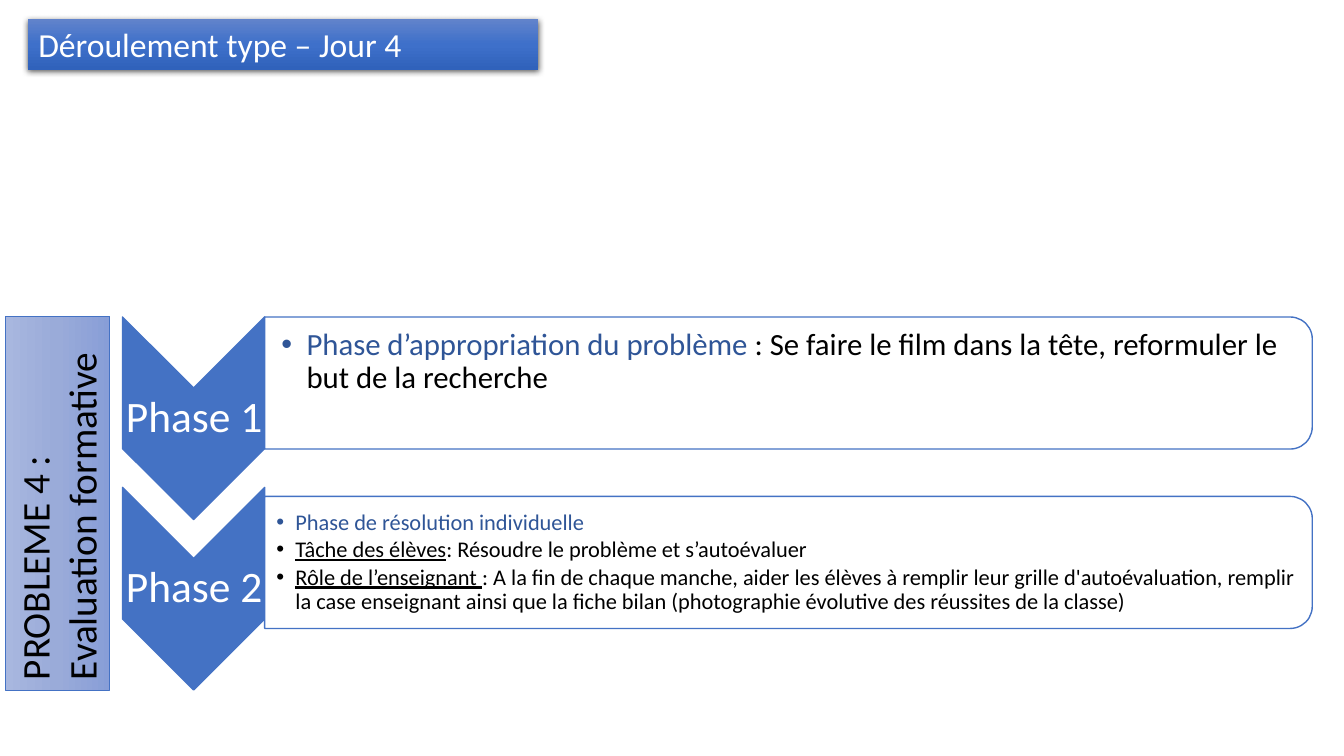
from copy import deepcopy
from dataclasses import dataclass

from lxml import etree
from pptx import Presentation
from pptx.dml.color import RGBColor
from pptx.enum.shapes import MSO_SHAPE
from pptx.enum.text import MSO_ANCHOR, MSO_AUTO_SIZE, PP_ALIGN
from pptx.oxml.ns import qn
from pptx.util import Inches, Pt

CHEVRON = MSO_SHAPE.CHEVRON
PANEL = MSO_SHAPE.ROUND_2_SAME_RECTANGLE
RECTANGLE = MSO_SHAPE.RECTANGLE
TOP, MIDDLE = MSO_ANCHOR.TOP, MSO_ANCHOR.MIDDLE
LEFT, CENTER = PP_ALIGN.LEFT, PP_ALIGN.CENTER
NO_FIT = MSO_AUTO_SIZE.NONE
TWO_CONTENT = 3  # layout with a title and two lists


@dataclass(frozen=True)
class Theme:
    font: str = "Calibri"
    white: str = "FFFFFF"
    black: str = "000000"
    accent: str = "4472C4"
    heading: str = "2F5597"
    title_gradient: tuple = ("6183CB", "3E70CA", "3062BB")
    side_gradient: tuple = ("A8B7DF", "9AABD9", "889ED7")
    title_size: int = 24
    side_size: int = 28
    phase_size: int = 31


@dataclass(frozen=True)
class Run:
    text: str
    color: str
    underline: bool = False


@dataclass(frozen=True)
class Phase:
    name: str
    size: int
    indent: float
    inset: float
    anchor: MSO_ANCHOR
    items: list


THEME = Theme()

PHASES = [
    Phase("Phase 1", 22, 0.25, 0.17, TOP, [
        [Run("Phase d’appropriation du problème ", THEME.heading),
         Run(": Se faire le film dans la tête, reformuler le but de la recherche",
             THEME.black)],
    ]),
    Phase("Phase 2", 16, 0.19, 0.12, MIDDLE, [
        [Run("Phase de résolution individuelle", THEME.heading)],
        [Run("Tâche des élèves", THEME.black, True),
         Run(": Résoudre le problème et s’autoévaluer", THEME.black)],
        [Run("Rôle de l’enseignant ", THEME.black, True),
         Run(": A la fin de chaque manche, aider les élèves à remplir leur grille "
             "d'autoévaluation, remplir la case enseignant ainsi que la fiche bilan "
             "(photographie évolutive des réussites de la classe)", THEME.black)],
    ]),
]


def place(sp, left: float, top: float, width: float, height: float) -> None:
    sp.left, sp.top = Inches(left), Inches(top)
    sp.width, sp.height = Inches(width), Inches(height)


def set_frame(sp, anchor: MSO_ANCHOR, left: float, rest: float):
    tf = sp.text_frame
    tf.word_wrap = True
    tf.auto_size = NO_FIT
    tf.vertical_anchor = anchor
    tf.margin_left = Inches(left)
    tf.margin_top = tf.margin_right = tf.margin_bottom = Inches(rest)
    return tf


def add_run(p, run: Run, size: int) -> None:
    r = p.add_run()
    r.text = run.text
    r.font.name = THEME.font
    r.font.size = Pt(size)
    r.font.color.rgb = RGBColor.from_string(run.color)
    r.font.underline = run.underline


def set_gradient(sp, colors: tuple) -> None:
    """Fill from the shape's top to its bottom with three even stops."""
    sp.fill.gradient()
    sp.fill.gradient_angle = 270
    stop_list = sp.element.spPr.find(".//" + qn("a:gsLst"))
    stop_list.insert(1, deepcopy(stop_list[0]))
    for i, (stop, color) in enumerate(zip(sp.fill.gradient_stops, colors)):
        stop.color.rgb = RGBColor.from_string(color)
        stop.position = i / 2


def add_shadow(sp) -> None:
    sp.shadow.inherit = False
    effects = sp.element.spPr.find(qn("a:effectLst"))
    shadow = etree.SubElement(effects, qn("a:outerShdw"), blurRad=str(Pt(4.5)),
                              dist=str(Pt(1.5)), dir="5400000", algn="ctr",
                              rotWithShape="0")
    color = etree.SubElement(shadow, qn("a:srgbClr"), val=THEME.black)
    etree.SubElement(color, qn("a:alpha"), val="63000")


def add_turned_shape(s, kind: MSO_SHAPE, center_x: float, center_y: float,
                     length: float, breadth: float, rotation: int,
                     line_width: float):
    sp = s.shapes.add_shape(kind, Inches(center_x - length / 2),
                            Inches(center_y - breadth / 2),
                            Inches(length), Inches(breadth))
    sp.rotation = rotation
    sp.shadow.inherit = False
    sp.line.color.rgb = RGBColor.from_string(THEME.accent)
    sp.line.width = Pt(line_width)
    return sp


def fill_list(body, phase: Phase) -> None:
    tf = set_frame(body, phase.anchor, phase.inset, 0.02)
    if phase.anchor == TOP:
        tf.margin_top = Inches(0.05)
    for i, runs in enumerate(phase.items):
        p = tf.add_paragraph() if i else tf.paragraphs[0]
        p.alignment = LEFT
        p.line_spacing = 0.9
        p.space_before = Pt(0)
        p.space_after = Pt(phase.size * 0.15)
        pPr = p._p.get_or_add_pPr()
        pPr.set("marL", str(Inches(phase.indent)))
        pPr.set("indent", str(-Inches(phase.indent)))
        etree.SubElement(pPr, qn("a:buChar"), char="•")
        for run in runs:
            add_run(p, run, phase.size)


def add_phase(s, phase: Phase, row: int, body) -> None:
    arrow_y = 4.15 + 1.69 * row
    panel_y = 3.8 + 1.78 * row

    # Downward chevron and its name
    arrow = add_turned_shape(s, CHEVRON, 1.92, arrow_y, 2.01, 1.41, 90, 1)
    arrow.fill.solid()
    arrow.fill.fore_color.rgb = RGBColor.from_string(THEME.accent)
    label = s.shapes.add_textbox(Inches(1.22), Inches(arrow_y - 0.3),
                                 Inches(1.41), Inches(0.6))
    p = set_frame(label, MIDDLE, 0, 0).paragraphs[0]
    p.alignment = CENTER
    p.line_spacing = 0.9
    add_run(p, Run(phase.name, THEME.white), THEME.phase_size)

    # Panel with the list in front
    panel = add_turned_shape(s, PANEL, 7.82, panel_y, 1.31, 10.39, 90, 1)
    panel.fill.solid()
    panel.fill.fore_color.rgb = RGBColor.from_string(THEME.white)
    place(body, 2.62, panel_y - 0.59, 10.33, 1.18)
    fill_list(body, phase)
    panel.element.addnext(body.element)


def add_side_label(s) -> None:
    side = add_turned_shape(s, RECTANGLE, 0.57, 4.99, 3.71, 1.04, 270, 0.5)
    set_gradient(side, THEME.side_gradient)
    p = set_frame(side, MIDDLE, 0.1, 0.05).paragraphs[0]
    p.alignment = LEFT
    add_run(p, Run("PROBLEME 4 : Evaluation formative", THEME.black),
            THEME.side_size)


def format_title(title) -> None:
    place(title, 0.28, 0.19, 5.06, 0.5)
    set_gradient(title, THEME.title_gradient)
    title.line.fill.background()
    add_shadow(title)
    p = set_frame(title, MIDDLE, 0.1, 0.05).paragraphs[0]
    p.alignment = LEFT
    add_run(p, Run("Déroulement type – Jour 4", THEME.white), THEME.title_size)


def main() -> None:
    prs = Presentation()
    prs.slide_width, prs.slide_height = Inches(13.33), Inches(7.5)
    s = prs.slides.add_slide(prs.slide_layouts[TWO_CONTENT])
    format_title(s.shapes.title)
    bodies = list(s.placeholders)[1:]
    for row, (phase, body) in enumerate(zip(PHASES, bodies)):
        add_phase(s, phase, row, body)
    add_side_label(s)
    prs.save("out.pptx")


if __name__ == "__main__":
    main()
